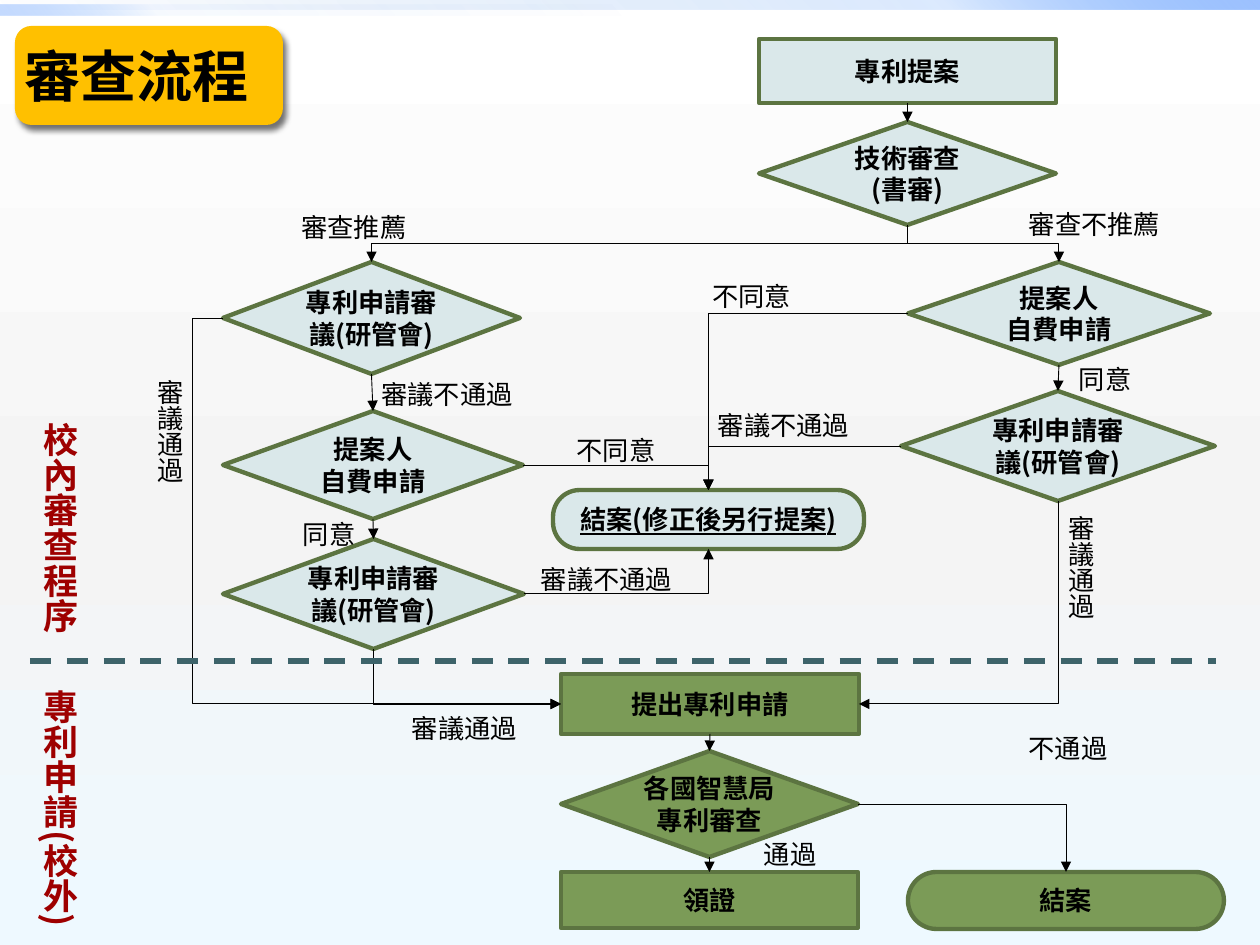
from lxml import etree
from pptx import Presentation
from pptx import util as u
from pptx.dml import color
from pptx.enum import dml, shapes, text
from pptx.oxml.ns import qn

PX = 7257  # EMU in one px, 126 px to the inch
FONT = "Noto Sans CJK SC"
PALE, GREEN, EDGE, RED = "DAE8EA", "7B9B57", "5C7441", "9E0000"
RECT = shapes.MSO_SHAPE.RECTANGLE
ROUND = shapes.MSO_SHAPE.ROUNDED_RECTANGLE
DIAMOND = shapes.MSO_SHAPE.FLOWCHART_DECISION
TOP, LEFT, BOTTOM, RIGHT = range(4)
hue = color.RGBColor.from_string

prs = Presentation()
prs.slide_width, prs.slide_height = u.Inches(10), u.Inches(7.5)
slide = prs.slides.add_slide(prs.slide_layouts[6])


def form(kind, box, fill, edge=None):
    shape = slide.shapes.add_shape(kind, *[n * PX for n in box])
    shape.shadow.inherit = False
    shape.fill.solid()
    shape.fill.fore_color.rgb = hue(fill)
    if edge:
        shape.line.color.rgb = hue(edge)
        shape.line.width = u.Pt(2.5)
    else:
        shape.line.fill.background()
    return shape


def say(shape, words, size=15, ink="000000", bold=False, align="CENTER", down=False):
    """Write words in a shape; down sets them in vertical columns."""
    frame = shape.text_frame
    frame.word_wrap = True
    frame.vertical_anchor = text.MSO_ANCHOR.MIDDLE
    frame.margin_left = frame.margin_right = 0
    frame.margin_top = frame.margin_bottom = 0
    if down:
        frame._txBody.find(qn("a:bodyPr")).set("vert", "eaVert")
    frame.text = words
    for par in frame.paragraphs:
        par.alignment = getattr(text.PP_ALIGN, align)
        for run in par.runs:
            run.font.size, run.font.bold = u.Pt(size), bold
            run.font.color.rgb = hue(ink)
            run.font.name = FONT
            etree.SubElement(run.font._element, qn("a:ea"), typeface=FONT)


# Background and top bars: stops are (position, colour, opacity), in percent
slide.background.fill.solid()
back = slide.background._cSld.find(qn("p:bg")).find(qn("p:bgPr"))
wide = form(RECT, (0, 0, 1260, 10), "9EC2FF")
half = form(RECT, (0, 5, 630, 10), "9EC2FF")
blends = [
    (back, 90, [(0, "FFFFFF", 100), (55, "F4F4F4", 100), (100, "EEF9FF", 100)]),
    (wide._element.spPr, 315, [(0, "0058B7", 0), (75, "4F95FF", 20), (100, "9EC2FF", 100)]),
    (half._element.spPr, 135, [(0, "0058B7", 0), (75, "4F95FF", 5), (100, "9EC2FF", 60)]),
]
for owner, angle, stops in blends:
    grad = etree.Element(qn("a:gradFill"), rotWithShape="1")
    row = etree.SubElement(grad, qn("a:gsLst"))
    for pos, tint, alpha in stops:
        stop = etree.SubElement(row, qn("a:gs"), pos=str(pos * 1000))
        clr = etree.SubElement(stop, qn("a:srgbClr"), val=tint)
        etree.SubElement(clr, qn("a:alpha"), val=str(alpha * 1000))
    etree.SubElement(grad, qn("a:lin"), ang=str(angle * 60000), scaled="0")
    owner.replace(owner.find(qn("a:solidFill")), grad)

# Title
title = form(ROUND, (15, 26, 268, 99), "FFC000")
say(title, "審查流程", 32, bold=True, align="LEFT")
title.text_frame.margin_left = title.text_frame.margin_right = 5 * PX
glow = title._element.spPr.find(qn("a:effectLst"))
cast = etree.SubElement(glow, qn("a:outerShdw"), blurRad=str(u.Pt(3.5)),
                        dist=str(u.Pt(4)), dir=str(55 * 60000), algn="tl", rotWithShape="0")
clr = etree.SubElement(cast, qn("a:srgbClr"), val="000000")
etree.SubElement(clr, qn("a:alpha"), val="55000")

# Steps of the flow
steps = [
    ("idea", RECT, (759, 39, 297, 64), PALE, "專利提案"),
    ("tech", DIAMOND, (759, 122, 297, 103), PALE, "技術審查\v(書審)"),
    ("panel", DIAMOND, (223, 262, 297, 112), PALE, "專利申請審議(研管會)"),
    ("self", DIAMOND, (223, 411, 300, 108), PALE, "提案人\v自費申請"),
    ("second", DIAMOND, (223, 539, 301, 110), PALE, "專利申請審議(研管會)"),
    ("payer", DIAMOND, (908, 262, 302, 103), PALE, "提案人\v自費申請"),
    ("board", DIAMOND, (901, 391, 314, 110), PALE, "專利申請審議(研管會)"),
    ("redo", ROUND, (553, 490, 311, 59), PALE, "結案(修正後另行提案)"),
    ("file", RECT, (561, 674, 298, 60), GREEN, "提出專利申請"),
    ("office", DIAMOND, (561, 751, 297, 106), GREEN, "各國智慧局\v專利審查"),
    ("grant", RECT, (561, 872, 297, 56), GREEN, "領證"),
    ("close", ROUND, (908, 872, 316, 57), GREEN, "結案"),
]
nodes = {}
for name, kind, box, fill, words in steps:
    nodes[name] = form(kind, box, fill, EDGE)
    say(nodes[name], words, bold=True)
nodes["redo"].adjustments[0] = 0.45
nodes["close"].adjustments[0] = 0.5
nodes["redo"].text_frame.paragraphs[0].runs[0].font.underline = True

# Labels
labels = [
    ((237, 212, 234, 30), "審查推薦", False),
    ((988, 207, 213, 34), "審查不推薦", False),
    ((658, 410, 251, 30), "審議不通過", False),
    ((1027, 360, 156, 39), "同意", False),
    ((674, 281, 155, 30), "不同意", False),
    ((538, 435, 156, 30), "不同意", False),
    ((314, 379, 266, 30), "審議不通過", False),
    ((295, 508, 68, 52), "同意", False),
    ((362, 713, 205, 30), "審議通過", False),
    ((471, 559, 271, 40), "審議不通過", False),
    ((712, 839, 156, 30), "通過", False),
    ((990, 728, 156, 40), "不通過", False),
    ((1047, 515, 67, 110), "審議通過", True),
    ((136, 379, 67, 120), "審議通過", True),
]
for box, words, down in labels:
    say(slide.shapes.add_textbox(*[n * PX for n in box]), words, down=down)

# Arrows: start, side, end, side, bends (0 straight), place of the middle leg
links = [
    ("idea", BOTTOM, "tech", TOP, 0, None),
    ("panel", BOTTOM, "self", TOP, 0, None),
    ("self", BOTTOM, "second", TOP, 0, None),
    ("payer", BOTTOM, "board", TOP, 0, None),
    ("file", BOTTOM, "office", TOP, 0, None),
    ("office", BOTTOM, "grant", TOP, 0, None),
    ("tech", BOTTOM, "panel", TOP, 2, 0.5),
    ("tech", BOTTOM, "payer", TOP, 2, 0.5),
    ("panel", LEFT, "file", LEFT, 2, -0.09),
    ("board", BOTTOM, "file", RIGHT, 1, None),
    ("second", BOTTOM, "file", LEFT, 1, None),
    ("payer", LEFT, "redo", TOP, 1, None),
    ("board", LEFT, "redo", TOP, 1, None),
    ("self", RIGHT, "redo", TOP, 1, None),
    ("second", RIGHT, "redo", BOTTOM, 1, None),
    ("office", RIGHT, "close", TOP, 1, None),
]
for start, out, end, into, bends, mid in links:
    kind = shapes.MSO_CONNECTOR.ELBOW if bends else shapes.MSO_CONNECTOR.STRAIGHT
    wire = slide.shapes.add_connector(kind, 0, 0, 0, 0)
    wire.begin_connect(nodes[start], out)
    wire.end_connect(nodes[end], into)
    wire.line.color.rgb = hue("000000")
    wire.line.width = u.Pt(0.5)
    props = wire._element.spPr
    etree.SubElement(props.find(qn("a:ln")), qn("a:tailEnd"), type="triangle")
    etree.SubElement(props, qn("a:effectLst"))
    if bends:
        shape = props.find(qn("a:prstGeom"))
        shape.set("prst", f"bentConnector{bends + 1}")
        if mid is not None:
            etree.SubElement(shape.find(qn("a:avLst")), qn("a:gd"), name="adj1",
                             fmla=f"val {round(mid * 100000)}")
    if bends and out == BOTTOM:  # first leg is vertical: a quarter turn about the centre
        x1, y1, x2, y2 = wire.begin_x, wire.begin_y, wire.end_x, wire.end_y
        cx, cy, dx, dy = (x1 + x2) // 2, (y1 + y2) // 2, (x2 - x1) // 2, (y2 - y1) // 2
        wire.begin_x, wire.begin_y = cx - dy, cy + dx
        wire.end_x, wire.end_y = cx + dy, cy - dx
        props.find(qn("a:xfrm")).set("rot", str(90 * 60000))

# Border between the campus stage and the outside stage
border = slide.shapes.add_connector(shapes.MSO_CONNECTOR.STRAIGHT,
                                    30 * PX, 661 * PX, 1216 * PX, 661 * PX)
border.line.color.rgb = hue("3D636A")
border.line.width = u.Pt(3)
border.line.dash_style = dml.MSO_LINE.DASH
etree.SubElement(border._element.spPr, qn("a:effectLst"))
for top, high, words in [(423, 218, "校內審查程序"), (690, 238, "專利申請(校外)")]:
    stage = slide.shapes.add_textbox(25 * PX, top * PX, 69 * PX, high * PX)
    say(stage, words, 20, RED, True, "LEFT", True)

prs.save("out.pptx")
